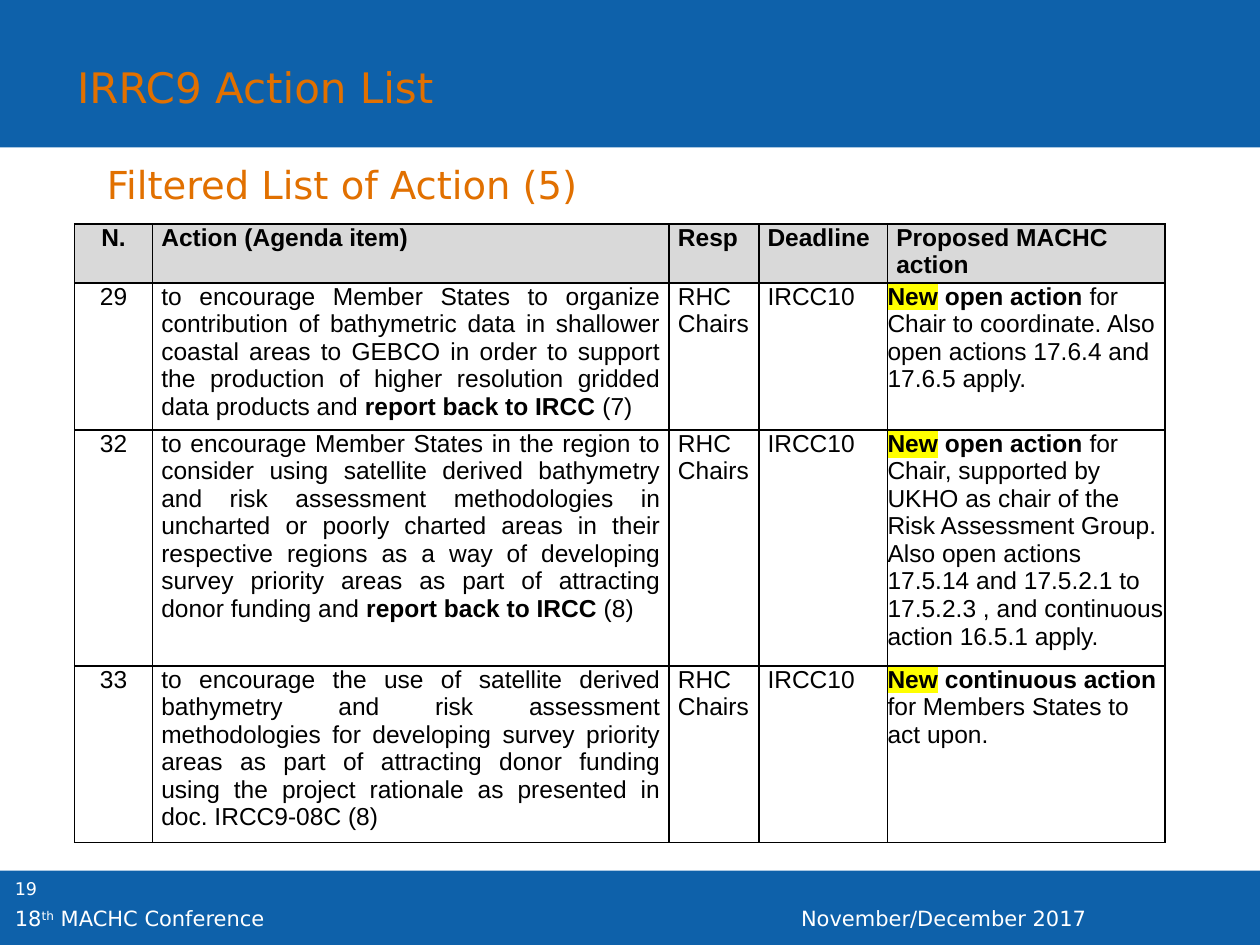
from pptx import Presentation
from pptx.dml.color import RGBColor
from pptx.enum import shapes, text
from pptx.oxml import parse_xml
from pptx.oxml.ns import nsdecls
from pptx.util import Pt

BLUE, ORANGE, WHITE, BLACK = "0E61AA", "E17000", "FFFFFF", "000000"
GREY, YELLOW = "D9D9D9", "FFFF00"
SLIDE_W, SLIDE_H = 720, 540
LEFT, CENTER, JUSTIFY = (text.PP_ALIGN.LEFT, text.PP_ALIGN.CENTER,
                         text.PP_ALIGN.JUSTIFY)

COLUMN_WIDTHS = [44.6, 295.2, 51.2, 73.6, 158.6]
ROW_HEIGHTS = [33.6, 84, 134.8, 100.6]
COLUMN_ALIGNS = [CENTER, JUSTIFY, LEFT, LEFT, LEFT]
CELL_MARGIN = 5

BOLD = {"bold": True}
NEW = ("New", {"bold": True, "highlight": YELLOW})
REPORT_BACK = ("report back to IRCC", BOLD)
HEADINGS = ["N.", "Action (Agenda item)", "Resp", "Deadline",
            "Proposed MACHC action"]
ACTIONS = [
    ("29",
     ["to encourage Member States to organize contribution of bathymetric "
      "data in shallower coastal areas to GEBCO in order to support the "
      "production of higher resolution gridded data products and ",
      REPORT_BACK, " (7)"],
     [NEW, (" open action", BOLD),
      " for Chair to coordinate. Also open actions 17.6.4 and 17.6.5 apply."]),
    ("32",
     ["to encourage Member States in the region to consider using satellite "
      "derived bathymetry and risk assessment methodologies in uncharted or "
      "poorly charted areas in their respective regions as a way of "
      "developing survey priority areas as part of attracting donor funding "
      "and ", REPORT_BACK, " (8)"],
     [NEW, (" open action", BOLD),
      " for Chair, supported by UKHO as chair of the Risk Assessment Group. "
      "Also open actions 17.5.14 and 17.5.2.1 to 17.5.2.3 , and continuous "
      "action 16.5.1 apply."]),
    ("33",
     ["to encourage the use of satellite derived bathymetry and risk "
      "assessment methodologies for developing survey priority areas as part "
      "of attracting donor funding using the project rationale as presented "
      "in doc. IRCC9-08C (8)"],
     [NEW, (" continuous action", BOLD), " for Members States to act upon."]),
]


def rgb(color):
    return RGBColor.from_string(color)


def write(frame, runs, size, color, font="DejaVu Sans", align=LEFT, bold=False):
    """Fill a frame with runs, each a string or a (string, format) pair."""
    paragraph = frame.paragraphs[0]
    paragraph.alignment = align
    for item in [runs] if isinstance(runs, str) else runs:
        words, style = (item, {}) if isinstance(item, str) else item
        run = paragraph.add_run()
        run.text = words
        run.font.size = Pt(size)
        run.font.name = font
        run.font.bold = style.get("bold", bold)
        run.font.color.rgb = rgb(color)
        properties = run.font._element
        if "baseline" in style:
            properties.set("baseline", str(style["baseline"]))
        if "highlight" in style:
            properties.find("{*}solidFill").addnext(parse_xml(
                f'<a:highlight {nsdecls("a")}>'
                f'<a:srgbClr val="{style["highlight"]}"/></a:highlight>'))


def add_band(slide, top, height):
    band = slide.shapes.add_shape(shapes.MSO_SHAPE.RECTANGLE, 0, Pt(top),
                                  Pt(SLIDE_W), Pt(height))
    band.shadow.inherit = False
    band.fill.solid()
    band.fill.fore_color.rgb = rgb(BLUE)
    band.line.fill.background()


def add_label(slide, box, runs, wrap=True, **style):
    label = slide.shapes.add_textbox(*map(Pt, box))
    label.text_frame.word_wrap = wrap
    write(label.text_frame, runs, **style)


def add_header(slide, left, top, height):
    add_band(slide, top, height)
    add_label(slide, (left, top + 31.6, 235, 36), "IRRC9 Action List",
              wrap=False, size=24, color=ORANGE)


def add_footer(slide, top, height):
    add_band(slide, top, height)
    add_label(slide, (1.4, top + 0.7, 56, 29), "19", size=10, color=WHITE)
    conference = ["18", ("th", {"baseline": 30000}), " MACHC Conference"]
    for left, width, words in [(1.4, 315, conference),
                               (450.7, 269.3, "November/December 2017")]:
        add_label(slide, (left, top + 16.6, width, 17.3), words,
                  size=12, color=WHITE)


def draw_borders(cell):
    properties = cell._tc.get_or_add_tcPr()
    for side in "LRTB":
        properties.append(parse_xml(
            f'<a:ln{side} {nsdecls("a")} w="12700"><a:solidFill>'
            f'<a:srgbClr val="{BLACK}"/></a:solidFill></a:ln{side}>'))


def fill_cell(cell, runs, align, margin, heading):
    cell.margin_left = cell.margin_right = Pt(margin)
    cell.margin_top = cell.margin_bottom = 0
    draw_borders(cell)
    if heading:
        cell.fill.solid()
        cell.fill.fore_color.rgb = rgb(GREY)
    else:
        cell.fill.background()
    write(cell.text_frame, runs, size=14, color=BLACK, font="Arial",
          align=align, bold=heading)


def add_action_table(slide, left, top):
    rows = [HEADINGS] + [[number, action, "RHC Chairs", "IRCC10", proposal]
                         for number, action, proposal in ACTIONS]
    table = slide.shapes.add_table(
        len(rows), len(HEADINGS), Pt(left), Pt(top),
        Pt(sum(COLUMN_WIDTHS)), Pt(sum(ROW_HEIGHTS))).table
    table.first_row = table.horz_banding = False
    for column, width in zip(table.columns, COLUMN_WIDTHS):
        column.width = Pt(width)
    for r, (row, height) in enumerate(zip(rows, ROW_HEIGHTS)):
        table.rows[r].height = Pt(height)
        heading = r == 0
        for c, runs in enumerate(row):
            is_proposal = c == len(row) - 1 and not heading
            align = LEFT if heading and c else COLUMN_ALIGNS[c]
            fill_cell(table.cell(r, c), runs, align,
                      0 if is_proposal else CELL_MARGIN, heading)


def main():
    deck = Presentation()
    deck.slide_width, deck.slide_height = Pt(SLIDE_W), Pt(SLIDE_H)
    slide = deck.slides.add_slide(deck.slide_layouts[6])
    add_footer(slide, 497.5, 42.5)
    add_header(slide, 37, 0, 84.3)
    add_label(slide, (54, 88.6, 300, 33.8), "Filtered List of Action (5)",
              wrap=False, size=22, color=ORANGE)
    add_action_table(slide, 42.6, 128)
    deck.save("out.pptx")


if __name__ == "__main__":
    main()
